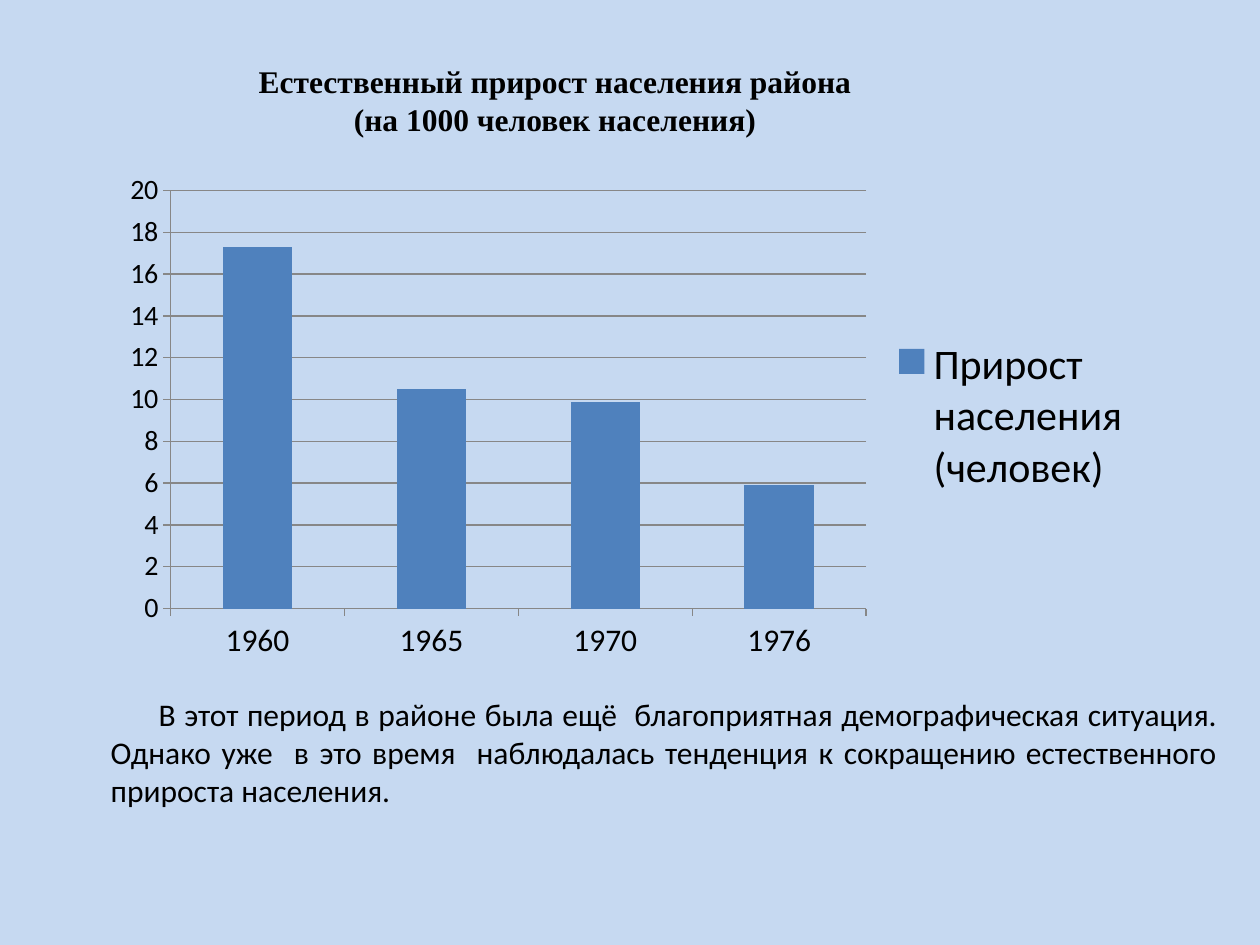
from lxml.etree import SubElement
from pptx import Presentation
from pptx.chart.data import CategoryChartData
from pptx.dml.color import RGBColor
from pptx.enum.chart import XL_CHART_TYPE, XL_LEGEND_POSITION, XL_TICK_MARK
from pptx.enum.text import MSO_AUTO_SIZE, PP_ALIGN
from pptx.oxml.ns import qn
from pptx.util import Inches, Pt

WIDTH, HEIGHT = Inches(10), Inches(7.5)
TITLE_LINES = ["Естественный прирост населения района", "(на 1000 человек населения)"]
COMMENT = (
    "В этот период в районе была ещё  благоприятная демографическая ситуация. "
    "Однако уже  в это время  наблюдалась тенденция к сокращению естественного "
    "прироста населения."
)
GROWTH_BY_YEAR = {"1960": 17.3, "1965": 10.5, "1970": 9.9, "1976": 5.9}
PLOT_SHARES = {"x": 0.06, "y": 0.05, "w": 0.67, "h": 0.83}


def color(hex_value):
    """Turn a hex string into a colour."""
    return RGBColor.from_string(hex_value)


def box(left, top, width, height):
    """Turn shares of the slide into a placed box."""
    return [round(n) for n in (left * WIDTH, top * HEIGHT, width * WIDTH, height * HEIGHT)]


def set_format(target, values):
    """Set each attribute in values on the target."""
    for name, value in values.items():
        setattr(target, name, value)


def set_font(font, size, name="Calibri", bold=False):
    """Give a font its face, size and black colour."""
    set_format(font, {"name": name, "size": Pt(size), "bold": bold})
    font.color.rgb = color("000000")


def add_text(slide, area, lines, align, indent=0, **font_values):
    """Write paragraphs into a wrapping text box."""
    frame = slide.shapes.add_textbox(*area).text_frame
    set_format(frame, {"word_wrap": True, "auto_size": MSO_AUTO_SIZE.SHAPE_TO_FIT_TEXT})
    frame.text = "\n".join(lines)
    for paragraph in frame.paragraphs:
        paragraph.alignment = align
        paragraph._p.get_or_add_pPr().set("indent", str(Inches(indent)))
        set_font(paragraph.runs[0].font, 18, **font_values)


def set_plot_layout(chart):
    """Fix the inner plot area as shares of the chart."""
    plot_area = chart._chartSpace.chart.plotArea
    layout = plot_area.find(qn("c:layout"))
    if layout is None:
        layout = SubElement(plot_area, qn("c:layout"))
        plot_area.insert(0, layout)
    manual = SubElement(layout, qn("c:manualLayout"))
    settings = {"layoutTarget": "inner", "xMode": "edge", "yMode": "edge", **PLOT_SHARES}
    for name, value in settings.items():
        SubElement(manual, qn(f"c:{name}")).set("val", str(value))


def style_axis(axis, size, gridlines):
    """Draw an axis with grey lines and outer ticks."""
    set_format(axis, {
        "has_major_gridlines": gridlines,
        "major_tick_mark": XL_TICK_MARK.OUTSIDE,
        "minor_tick_mark": XL_TICK_MARK.NONE,
    })
    set_font(axis.tick_labels.font, size)
    lines = [axis.format.line]
    if gridlines:
        lines.append(axis.major_gridlines.format.line)
    for line in lines:
        line.color.rgb = color("878787")
        line.width = Pt(0.75)


def add_growth_chart(slide, area):
    """Chart the natural growth by year."""
    growth = CategoryChartData()
    growth.categories = list(GROWTH_BY_YEAR)
    growth.add_series("Прирост населения (человек)", list(GROWTH_BY_YEAR.values()))
    chart = slide.shapes.add_chart(XL_CHART_TYPE.COLUMN_CLUSTERED, *area, growth).chart
    set_format(chart, {"has_title": False, "has_legend": True})
    set_font(chart.font, 10)
    set_format(chart.legend, {"position": XL_LEGEND_POSITION.RIGHT, "include_in_layout": False})
    set_font(chart.legend.font, 24)
    style_axis(chart.category_axis, 18, False)
    style_axis(chart.value_axis, 16, True)
    set_format(chart.value_axis, {"minimum_scale": 0, "maximum_scale": 20, "major_unit": 2})
    columns = chart.plots[0]
    set_format(columns, {"gap_width": 150, "vary_by_categories": False})
    fill = columns.series[0].format.fill
    fill.solid()
    fill.fore_color.rgb = color("4F81BD")
    set_plot_layout(chart)


def main():
    """Build and save the slide."""
    deck = Presentation()
    set_format(deck, {"slide_width": WIDTH, "slide_height": HEIGHT})
    slide = deck.slides.add_slide(deck.slide_layouts[6])
    background = slide.background.fill
    background.solid()
    background.fore_color.rgb = color("C6D9F1")
    add_growth_chart(slide, box(0.086, 0.175, 0.824, 0.533))
    add_text(slide, box(0.098, 0.059, 0.685, 0.095), TITLE_LINES, PP_ALIGN.CENTER,
             name="Times New Roman", bold=True)
    add_text(slide, box(0.078, 0.729, 0.898, 0.135), [COMMENT], PP_ALIGN.JUSTIFY, indent=0.38)
    deck.save("out.pptx")


if __name__ == "__main__":
    main()
